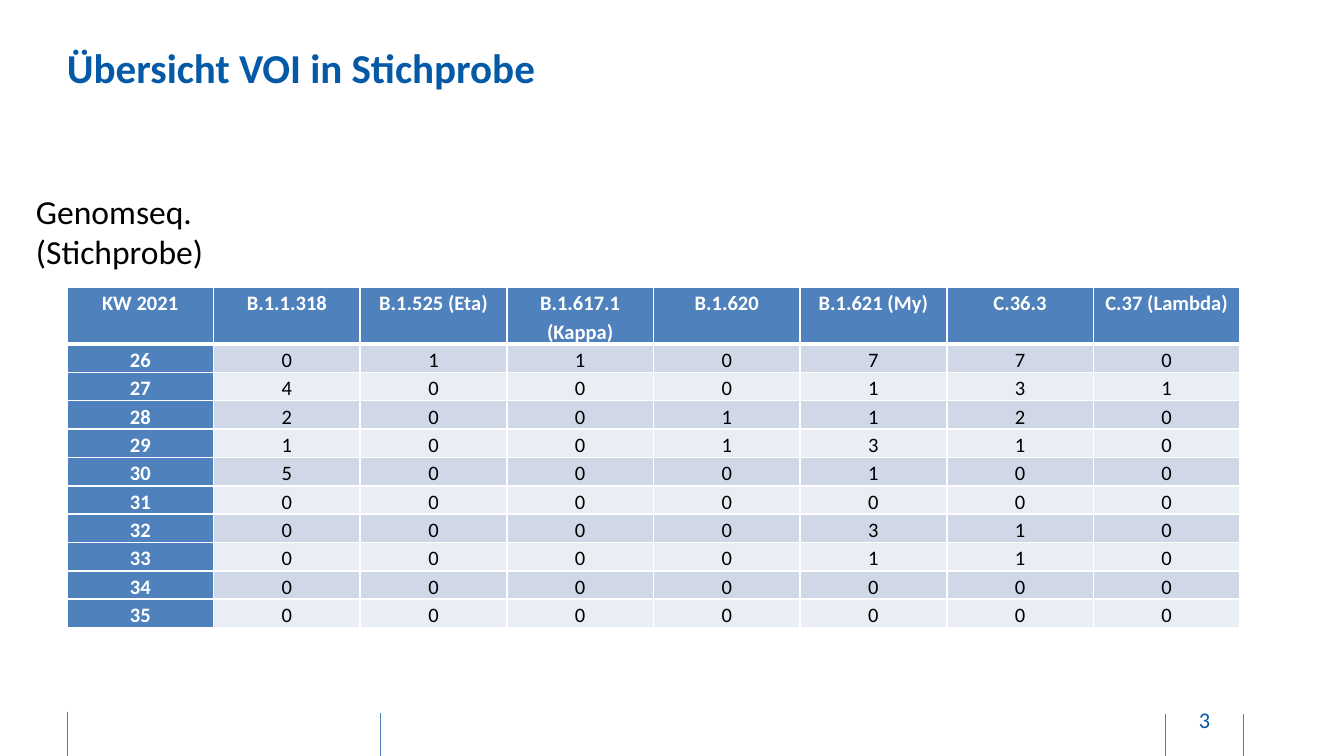
from lxml.etree import SubElement
from pptx import Presentation
from pptx.dml.color import RGBColor
from pptx.enum.shapes import MSO_CONNECTOR
from pptx.enum.text import MSO_ANCHOR as Anchor, MSO_AUTO_SIZE as AutoSize, PP_ALIGN as Align
from pptx.oxml import parse_xml
from pptx.oxml.ns import nsdecls, qn
from pptx.util import Pt

# Content
TITLE = "Übersicht VOI in Stichprobe"
SAMPLE_LABEL = "Genomseq.\v(Stichprobe)"
PAGE_NUMBER = "3"
HEADERS = ["KW 2021", "B.1.1.318", "B.1.525 (Eta)", "B.1.617.1 (Kappa)",
           "B.1.620", "B.1.621 (My)", "C.36.3", "C.37 (Lambda)"]
WEEKS = [
    (26, 0, 1, 1, 0, 7, 7, 0),
    (27, 4, 0, 0, 0, 1, 3, 1),
    (28, 2, 0, 0, 1, 1, 2, 0),
    (29, 1, 0, 0, 1, 3, 1, 0),
    (30, 5, 0, 0, 0, 1, 0, 0),
    (31, 0, 0, 0, 0, 0, 0, 0),
    (32, 0, 0, 0, 0, 3, 1, 0),
    (33, 0, 0, 0, 0, 1, 1, 0),
    (34, 0, 0, 0, 0, 0, 0, 0),
    (35, 0, 0, 0, 0, 0, 0, 0),
]
FOOTER_LINES = [(67, 712), (381, 713), (1165, 714), (1243, 714)]  # x, top
FOOTER_LINE_HEIGHT = 45

# Layout in px
WIDTH, HEIGHT = 1344, 756
TABLE_LEFT, TABLE_TOP, TABLE_WIDTH = 67, 287, 1173
HEADER_HEIGHT, ROW_HEIGHT = 57, 28

FONT = "Calibri"
BLUE = RGBColor(0x04, 0x5A, 0xA6)
ACCENT = RGBColor(0x4F, 0x81, 0xBD)
BAND_DARK = RGBColor(0xD0, 0xD8, 0xE8)
BAND_LIGHT = RGBColor(0xE9, 0xED, 0xF4)
WHITE = RGBColor(0xFF, 0xFF, 0xFF)
BLACK = RGBColor(0x00, 0x00, 0x00)


def px(value):
    return round(value * 9144000 / WIDTH)


def write(frame, content, size, color, bold=False, align=Align.LEFT, spacing=None):
    paragraph = frame.paragraphs[0]
    paragraph.text = content
    paragraph.alignment = align
    paragraph.line_spacing = spacing
    font = paragraph.font
    font.name, font.size, font.bold = FONT, Pt(size), bold
    font.color.rgb = color
    for run in paragraph.runs:
        run.font.name, run.font.size, run.font.bold = FONT, Pt(size), bold
        run.font.color.rgb = color


def add_frame(left, top, width, height, margins, anchor, wrap=True):
    frame = slide.shapes.add_textbox(px(left), px(top), px(width), px(height)).text_frame
    frame.margin_left = frame.margin_right = px(margins[0])
    frame.margin_top = frame.margin_bottom = px(margins[1])
    frame.vertical_anchor, frame.word_wrap = anchor, wrap
    return frame


def set_borders(cell, top, bottom):
    widths = {"lnL": 1, "lnR": 1, "lnT": top, "lnB": bottom}
    properties = cell._tc.get_or_add_tcPr()
    for position, (side, points) in enumerate(widths.items()):
        properties.insert(position, parse_xml(
            f'<a:{side} {nsdecls("a")} w="{Pt(points)}"><a:solidFill>'
            f'<a:srgbClr val="{WHITE}"/></a:solidFill></a:{side}>'))


deck = Presentation()
deck.slide_width, deck.slide_height = px(WIDTH), px(HEIGHT)
slide = deck.slides.add_slide(deck.slide_layouts[6])

# Footer dividers
for x, top in FOOTER_LINES:
    divider = slide.shapes.add_connector(
        MSO_CONNECTOR.STRAIGHT, px(x), px(top), px(x), px(top + FOOTER_LINE_HEIGHT))
    divider.line.color.rgb = ACCENT
    divider.line.width = Pt(0.5)
    SubElement(divider._element.spPr, qn("a:effectLst"))

# Page number, title and label
write(add_frame(1168, 700, 73, 40, (0, 7), Anchor.MIDDLE),
      PAGE_NUMBER, 12, BLUE, align=Align.CENTER)
write(add_frame(67, 15, 1173, 105, (0, 0), Anchor.MIDDLE), TITLE, 22, BLUE, bold=True)
sample_frame = add_frame(23, 184, 196, 95, (13, 7), Anchor.TOP, wrap=False)
sample_frame.auto_size = AutoSize.SHAPE_TO_FIT_TEXT
write(sample_frame, SAMPLE_LABEL, 18, BLACK)

# Variant table
rows = [HEADERS, *WEEKS]
table = slide.shapes.add_table(
    len(rows), len(HEADERS), px(TABLE_LEFT), px(TABLE_TOP), px(TABLE_WIDTH),
    px(HEADER_HEIGHT + ROW_HEIGHT * len(WEEKS))).table
for column in table.columns:
    column.width = px(TABLE_WIDTH / len(HEADERS))
for r, values in enumerate(rows):
    table.rows[r].height = px(ROW_HEIGHT if r else HEADER_HEIGHT)
    for c, value in enumerate(values):
        cell = table.cell(r, c)
        heading = r == 0 or c == 0
        cell.margin_left = cell.margin_right = px(7)
        cell.margin_top = cell.margin_bottom = 0
        cell.vertical_anchor = Anchor.TOP if heading else Anchor.BOTTOM
        cell.fill.solid()
        cell.fill.fore_color.rgb = ACCENT if heading else BAND_DARK if r % 2 else BAND_LIGHT
        set_borders(cell, top=3 if r == 1 else 1, bottom=3 if r == 0 else 1)
        write(cell.text_frame, str(value), 11, WHITE if heading else BLACK,
              bold=heading, align=Align.CENTER, spacing=1.15)

deck.save("out.pptx")
